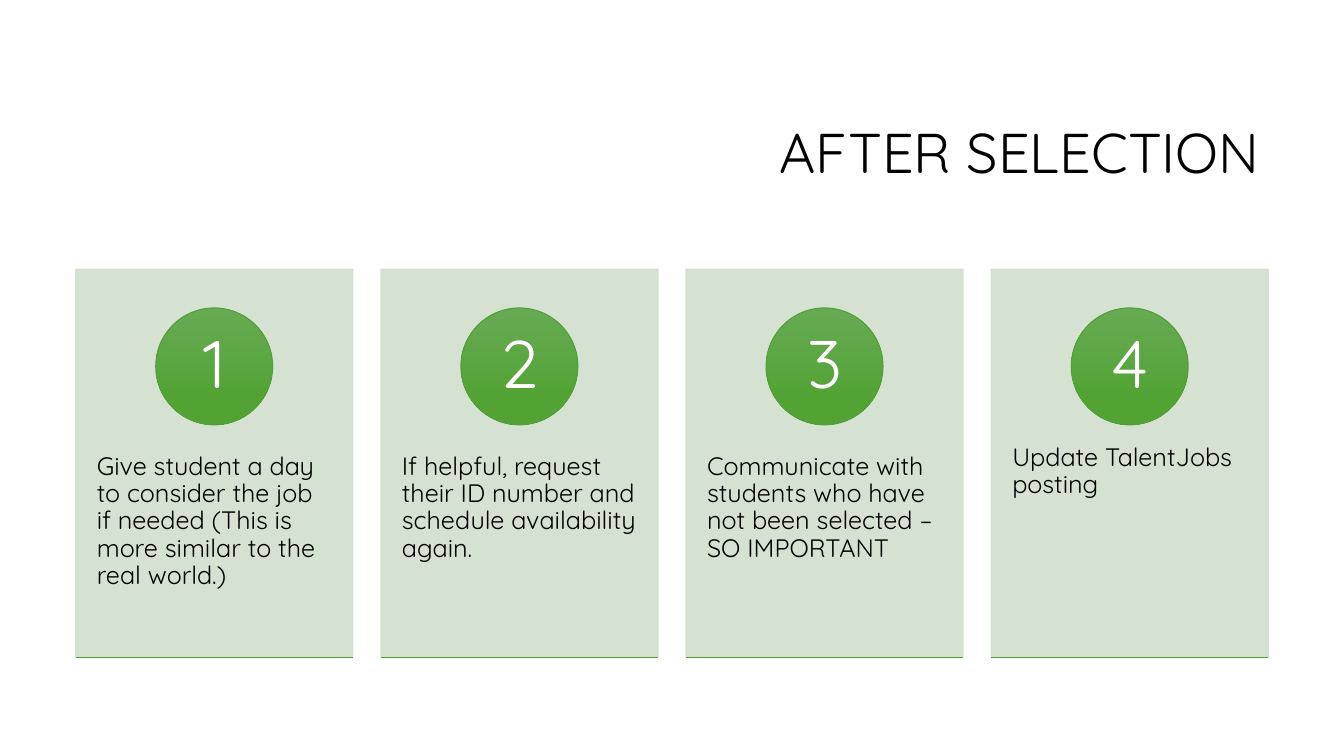
from dataclasses import dataclass

from lxml.etree import SubElement
from pptx import Presentation
from pptx.dml.color import RGBColor
from pptx.enum.shapes import MSO_CONNECTOR, MSO_SHAPE
from pptx.enum.text import MSO_ANCHOR, PP_ALIGN
from pptx.oxml.ns import qn
from pptx.util import Inches, Pt

# Content
TITLE = "AFTER SELECTION"
STEPS = [
    "Give student a day to consider the job if needed (This is more similar to the real world.)",
    "If helpful, request their ID number and schedule availability again.",
    "Communicate with students who have not been selected – SO IMPORTANT",
    "Update TalentJobs posting",
]


@dataclass(frozen=True)
class Theme:
    font: str = "Quicksand"
    ink: str = "000000"
    number: str = "FFFFFF"
    card: str = "D1DFCE"
    card_opacity: int = 90
    accent: str = "549E39"
    gradient: tuple = ((0, "67AA54"), (0.78, "52A334"))
    line_width: float = 0.75
    title_size: int = 40
    number_size: int = 48
    body_size: int = 18


THEME = Theme()

# Grid, in inches
SLIDE_WIDTH, SLIDE_HEIGHT = 13.33, 7.5
MARGIN = 0.75
CARD_WIDTH, CARD_HEIGHT, CARD_TOP = 2.75, 3.85, 2.67
PITCH = (SLIDE_WIDTH - 2 * MARGIN - CARD_WIDTH) / (len(STEPS) - 1)
CIRCLE_SIZE = 1.16
CIRCLE_TOP = CARD_TOP + CARD_HEIGHT / 10
BODY_TOP, BODY_HEIGHT = 4.14, 2.31


def color(value):
    return RGBColor.from_string(value)


def inches(*lengths):
    return [Inches(length) for length in lengths]


def write(shape, text, size, ink, align, anchor, insets=(0.1, 0.05)):
    frame = shape.text_frame
    frame.word_wrap = True
    frame.vertical_anchor = anchor
    frame.margin_left = frame.margin_right = Inches(insets[0])
    frame.margin_top = frame.margin_bottom = Inches(insets[1])
    para = frame.paragraphs[0]
    para.text = text
    para.alignment = align
    para.line_spacing = 0.9
    para.font.name = THEME.font
    para.font.size = Pt(size)
    para.font.color.rgb = color(ink)


def set_line(shape, value):
    shape.line.color.rgb = color(value)
    shape.line.width = Pt(THEME.line_width)


def add_card(page, left):
    card = page.shapes.add_shape(
        MSO_SHAPE.RECTANGLE, *inches(left, CARD_TOP, CARD_WIDTH, CARD_HEIGHT))
    card.shadow.inherit = False
    card.fill.solid()
    card.fill.fore_color.rgb = color(THEME.card)
    set_line(card, THEME.card)
    for tint in card._element.spPr.iter(qn("a:srgbClr")):
        SubElement(tint, qn("a:alpha"), val=str(THEME.card_opacity * 1000))


def add_number(page, left, number):
    circle_left = left + (CARD_WIDTH - CIRCLE_SIZE) / 2
    circle = page.shapes.add_shape(
        MSO_SHAPE.OVAL, *inches(circle_left, CIRCLE_TOP, CIRCLE_SIZE, CIRCLE_SIZE))
    circle.shadow.inherit = False
    circle.fill.gradient()
    circle.fill.gradient_angle = 270
    for stop, (position, value) in zip(circle.fill.gradient_stops, THEME.gradient):
        stop.position = position
        stop.color.rgb = color(value)
    set_line(circle, THEME.accent)
    write(circle, str(number), THEME.number_size, THEME.number,
          PP_ALIGN.CENTER, MSO_ANCHOR.MIDDLE, (0.09, 0.01))


def add_base_line(page, left):
    bottom = CARD_TOP + CARD_HEIGHT
    base = page.shapes.add_connector(
        MSO_CONNECTOR.STRAIGHT, *inches(left, bottom, left + CARD_WIDTH, bottom))
    set_line(base, THEME.accent)
    SubElement(base._element.spPr, qn("a:effectLst"))


def main():
    deck = Presentation()
    deck.slide_width, deck.slide_height = inches(SLIDE_WIDTH, SLIDE_HEIGHT)
    page = deck.slides.add_slide(deck.slide_layouts[6])

    # Title
    title = page.shapes.add_textbox(*inches(3.17, 0.84, 9.42, 1.41))
    write(title, TITLE, THEME.title_size, THEME.ink, PP_ALIGN.RIGHT, MSO_ANCHOR.MIDDLE)

    # Numbered cards
    for index, step in enumerate(STEPS):
        left = MARGIN + index * PITCH
        add_card(page, left)
        body = page.shapes.add_textbox(*inches(left, BODY_TOP, CARD_WIDTH, BODY_HEIGHT))
        write(body, step, THEME.body_size, THEME.ink,
              PP_ALIGN.LEFT, MSO_ANCHOR.TOP, (0.21, 0.36))
        add_number(page, left, index + 1)
        add_base_line(page, left)

    deck.save("out.pptx")


if __name__ == "__main__":
    main()
